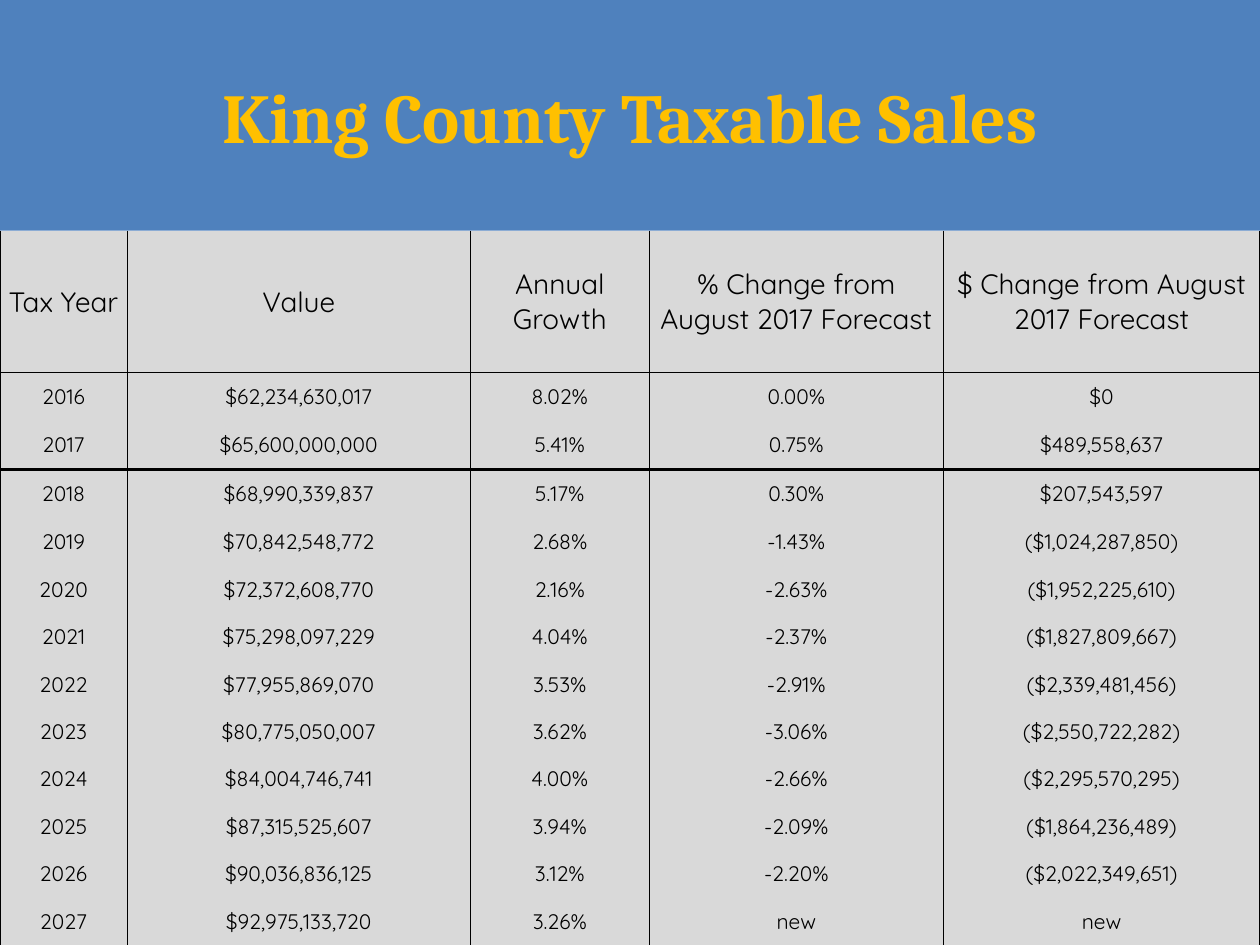
from lxml import etree
from pptx import Presentation
from pptx.dml.color import RGBColor as RGB
from pptx.enum.text import MSO_ANCHOR as ANCHOR, PP_ALIGN as ALIGN
from pptx.oxml.ns import qn
from pptx.util import Pt

COLORS = {"blue": "4F81BD", "gold": "FFC000", "gray": "D9D9D9", "black": "000000"}


def write(tf, text, size, font="Quicksand", color="black", bold=False):
    p = tf.paragraphs[0]
    p.alignment = ALIGN.CENTER
    r = p.add_run()
    r.text = text
    r.font.size = Pt(size)
    r.font.name = font
    r.font.bold = bold
    r.font.color.rgb = RGB.from_string(COLORS[color])


def border(cell, side, width):
    ln = etree.SubElement(cell._tc.get_or_add_tcPr(), qn(f"a:ln{side}"))
    if not width:
        etree.SubElement(ln, qn("a:noFill"))
        return
    ln.set("w", str(Pt(width)))
    fill = etree.SubElement(ln, qn("a:solidFill"))
    etree.SubElement(fill, qn("a:srgbClr"), val=COLORS["black"])


prs = Presentation()
prs.slide_width, prs.slide_height = Pt(720), Pt(540)
s = prs.slides.add_slide(prs.slide_layouts[5])

title = s.shapes.title
title.left, title.top, title.width, title.height = Pt(0), Pt(0), Pt(720), Pt(131.8)
title.fill.solid()
title.fill.fore_color.rgb = RGB.from_string(COLORS["blue"])
title.text_frame.vertical_anchor = ANCHOR.MIDDLE
write(title.text_frame, "King County Taxable Sales", 40,
      font="Cambria", color="gold", bold=True)

rows = [
    ("Tax Year", "Value", "Annual Growth", "% Change from August 2017 Forecast",
     "$ Change from August 2017 Forecast"),
    ("2016", "$62,234,630,017", "8.02%", "0.00%", "$0"),
    ("2017", "$65,600,000,000", "5.41%", "0.75%", "$489,558,637"),
    ("2018", "$68,990,339,837", "5.17%", "0.30%", "$207,543,597"),
    ("2019", "$70,842,548,772", "2.68%", "-1.43%", "($1,024,287,850)"),
    ("2020", "$72,372,608,770", "2.16%", "-2.63%", "($1,952,225,610)"),
    ("2021", "$75,298,097,229", "4.04%", "-2.37%", "($1,827,809,667)"),
    ("2022", "$77,955,869,070", "3.53%", "-2.91%", "($2,339,481,456)"),
    ("2023", "$80,775,050,007", "3.62%", "-3.06%", "($2,550,722,282)"),
    ("2024", "$84,004,746,741", "4.00%", "-2.66%", "($2,295,570,295)"),
    ("2025", "$87,315,525,607", "3.94%", "-2.09%", "($1,864,236,489)"),
    ("2026", "$90,036,836,125", "3.12%", "-2.20%", "($2,022,349,651)"),
    ("2027", "$92,975,133,720", "3.26%", "new", "new"),
]
col_widths = [72.6, 196.2, 102.3, 168, 180.9]
row_heights = [81, 27.4, 28, 28] + [27.1] * 9
rules = {0: 0.5, 2: 2, len(rows) - 1: 0.5}

table = s.shapes.add_table(len(rows), len(col_widths), Pt(0), Pt(131.8),
                           Pt(720), Pt(408.2)).table
table.first_row = False
table.horz_banding = False
for col, width in zip(table.columns, col_widths):
    col.width = Pt(width)

for i, (row, height) in enumerate(zip(rows, row_heights)):
    table.rows[i].height = Pt(height)
    for j, text in enumerate(row):
        cell = table.cell(i, j)
        cell.margin_left = cell.margin_right = Pt(0)
        cell.margin_top = cell.margin_bottom = Pt(0)
        cell.vertical_anchor = ANCHOR.MIDDLE
        widths = {"L": 0.5, "R": 0.5, "T": rules.get(i - 1), "B": rules.get(i)}
        for side, width in widths.items():
            border(cell, side, width)
        cell.fill.solid()
        cell.fill.fore_color.rgb = RGB.from_string(COLORS["gray"])
        write(cell.text_frame, text, 16 if i == 0 else 12)

prs.save("out.pptx")
